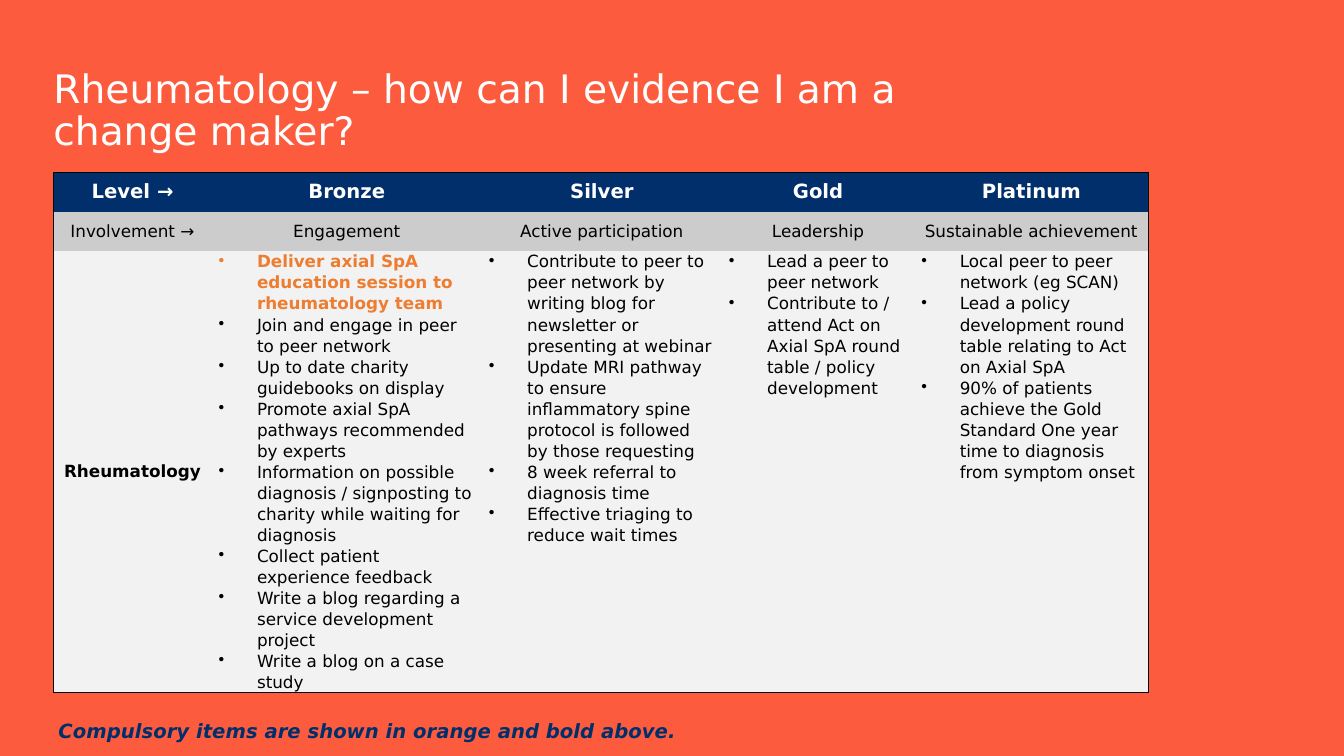
from pptx import Presentation
from pptx.dml.color import RGBColor
from pptx.enum.text import MSO_ANCHOR as Anchor, MSO_AUTO_SIZE as AutoSize, PP_ALIGN as Align
from pptx.oxml.ns import qn
from pptx.util import Inches, Pt
from lxml.etree import SubElement

CORAL = RGBColor(0xFC, 0x5C, 0x3D)
NAVY = RGBColor(0x00, 0x2F, 0x6C)
ORANGE = RGBColor(0xED, 0x7D, 0x31)
GREY = RGBColor(0xCC, 0xCC, 0xCC)
PALE = RGBColor(0xF2, 0xF2, 0xF2)
WHITE = RGBColor(0xFF, 0xFF, 0xFF)
BLACK = RGBColor(0x00, 0x00, 0x00)


def write(paragraph, text, size=12, color=BLACK, bold=False, italic=False,
          align=Align.LEFT, line=1.0, after=0, left=0, hanging=0):
    paragraph.alignment = align
    paragraph.line_spacing = line
    paragraph.space_before = Pt(0)
    paragraph.space_after = Pt(after)
    properties = paragraph._p.get_or_add_pPr()
    properties.set("marL", str(Inches(left)))
    properties.set("indent", str(-Inches(hanging)))
    if hanging:
        SubElement(properties, qn("a:buChar"), char="•")
    paragraph.text = text
    font = paragraph.font
    font.name = "DejaVu Sans"
    font.size = Pt(size)
    font.bold = bold
    font.italic = italic
    font.color.rgb = color


def set_borders(cell, drawn_sides):
    properties = cell._tc.get_or_add_tcPr()
    for side in "LRTB":
        border = SubElement(properties, qn(f"a:ln{side}"), w=str(Pt(1)))
        if side in drawn_sides:
            fill = SubElement(border, qn("a:solidFill"))
            SubElement(fill, qn("a:srgbClr"), val=str(BLACK))
        else:
            SubElement(border, qn("a:noFill"))


deck = Presentation()
deck.slide_width = Inches(13.33)
deck.slide_height = Inches(7.5)
slide = deck.slides.add_slide(deck.slide_layouts[5])
slide.background.fill.solid()
slide.background.fill.fore_color.rgb = CORAL

title = slide.shapes.title
title.left, title.top = Inches(0.53), Inches(0.62)
title.width, title.height = Inches(9.51), Inches(0.98)
heading = title.text_frame
heading.word_wrap = True
heading.auto_size = AutoSize.NONE
heading.vertical_anchor = Anchor.MIDDLE
heading.margin_left = heading.margin_right = 0
write(heading.paragraphs[0], "Rheumatology – how can I evidence I am a change maker?",
      size=28, color=WHITE, line=0.9)

levels = ["Level →", "Bronze", "Silver", "Gold", "Platinum"]
involvement = ["Involvement →", "Engagement", "Active participation", "Leadership",
               "Sustainable achievement"]
compulsory = "Deliver axial SpA education session to rheumatology team"
actions = [
    [compulsory,
     "Join and engage in peer to peer network",
     "Up to date charity guidebooks on display",
     "Promote axial SpA pathways recommended by experts",
     "Information on possible diagnosis / signposting to charity while waiting for diagnosis",
     "Collect patient experience feedback",
     "Write a blog regarding a service development project",
     "Write a blog on a case study"],
    ["Contribute to peer to peer network by writing blog for newsletter or presenting at webinar",
     "Update MRI pathway to ensure inflammatory spine protocol is followed by those requesting",
     "8 week referral to diagnosis time",
     "Effective triaging to reduce wait times"],
    ["Lead a peer to peer network",
     "Contribute to / attend Act on Axial SpA round table / policy development"],
    ["Local peer to peer network (eg SCAN)",
     "Lead a policy development round table relating to Act on Axial SpA",
     "90% of patients achieve the Gold Standard One year time to diagnosis from symptom onset"],
]
column_widths = [1.57, 2.68, 2.38, 1.91, 2.32]
row_heights = [0.39, 0.39, 4.38]
row_fills = [NAVY, GREY, PALE]

criteria = slide.shapes.add_table(3, 5, Inches(0.53), Inches(1.71),
                                  Inches(sum(column_widths)), Inches(sum(row_heights))).table
for column, width in zip(criteria.columns, column_widths):
    column.width = Inches(width)
for row, height in zip(criteria.rows, row_heights):
    row.height = Inches(height)

for r, fill in enumerate(row_fills):
    for c in range(5):
        cell = criteria.cell(r, c)
        set_borders(cell, {0: "L", 4: "R"}.get(c, "") + ["T", "", "B"][r])
        cell.fill.solid()
        cell.fill.fore_color.rgb = fill
        cell.vertical_anchor = Anchor.MIDDLE

for c, (level, role) in enumerate(zip(levels, involvement)):
    write(criteria.cell(0, c).text_frame.paragraphs[0], level,
          size=14, color=WHITE, bold=True, align=Align.CENTER)
    write(criteria.cell(1, c).text_frame.paragraphs[0], role, align=Align.CENTER)
write(criteria.cell(2, 0).text_frame.paragraphs[0], "Rheumatology",
      bold=True, align=Align.CENTER)

for c, items in enumerate(actions, start=1):
    cell = criteria.cell(2, c)
    cell.vertical_anchor = Anchor.TOP
    cell.margin_left = cell.margin_right = Inches(0.07)
    cell.margin_top = cell.margin_bottom = 0
    for i, item in enumerate(items):
        frame = cell.text_frame
        paragraph = frame.add_paragraph() if i else frame.paragraphs[0]
        required = item == compulsory
        write(paragraph, item, color=ORANGE if required else BLACK, bold=required,
              line=1.07, left=0.38, hanging=0.38)

footnote = slide.shapes.add_textbox(Inches(0.28), Inches(7.08),
                                    Inches(12.52), Inches(0.7)).text_frame
footnote.word_wrap = True
footnote.margin_left = 0
write(footnote.paragraphs[0], "Compulsory items are shown in orange and bold above.",
      size=14, color=NAVY, bold=True, italic=True, align=Align.JUSTIFY, after=6, left=0.3)

deck.save("out.pptx")
